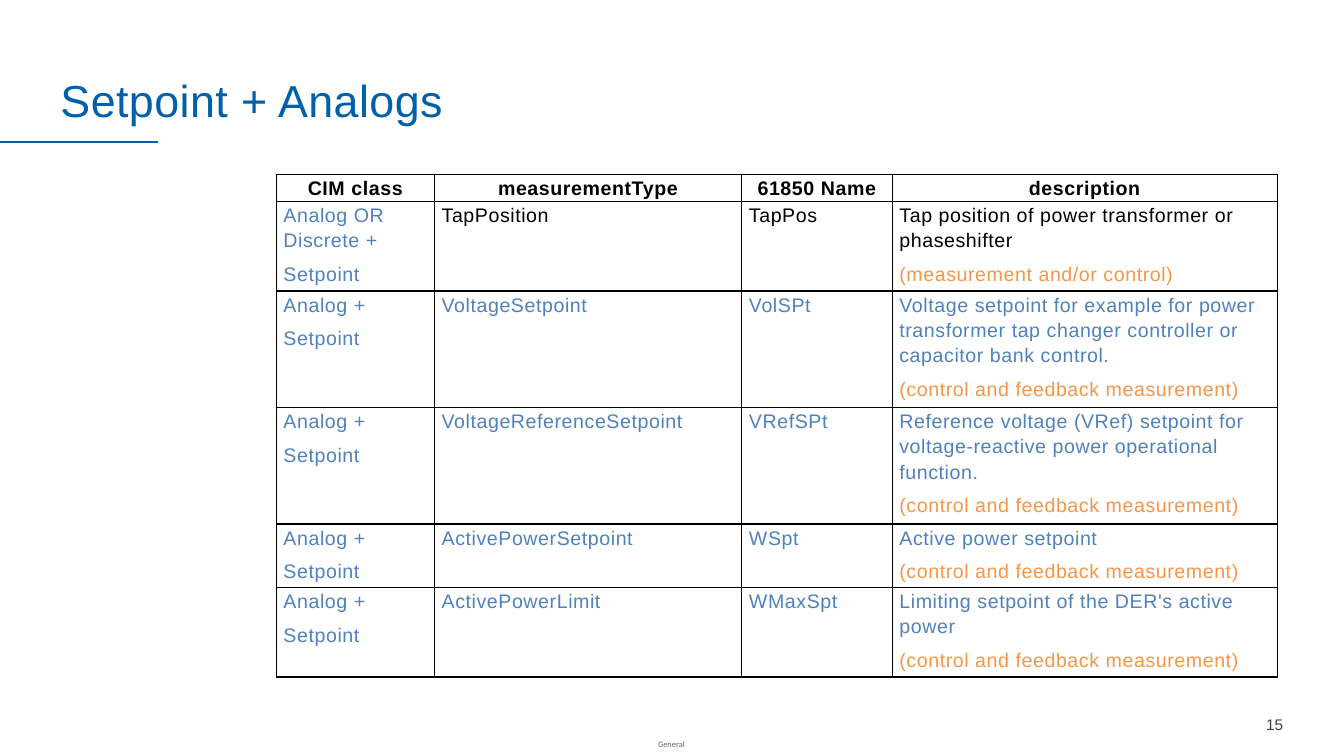
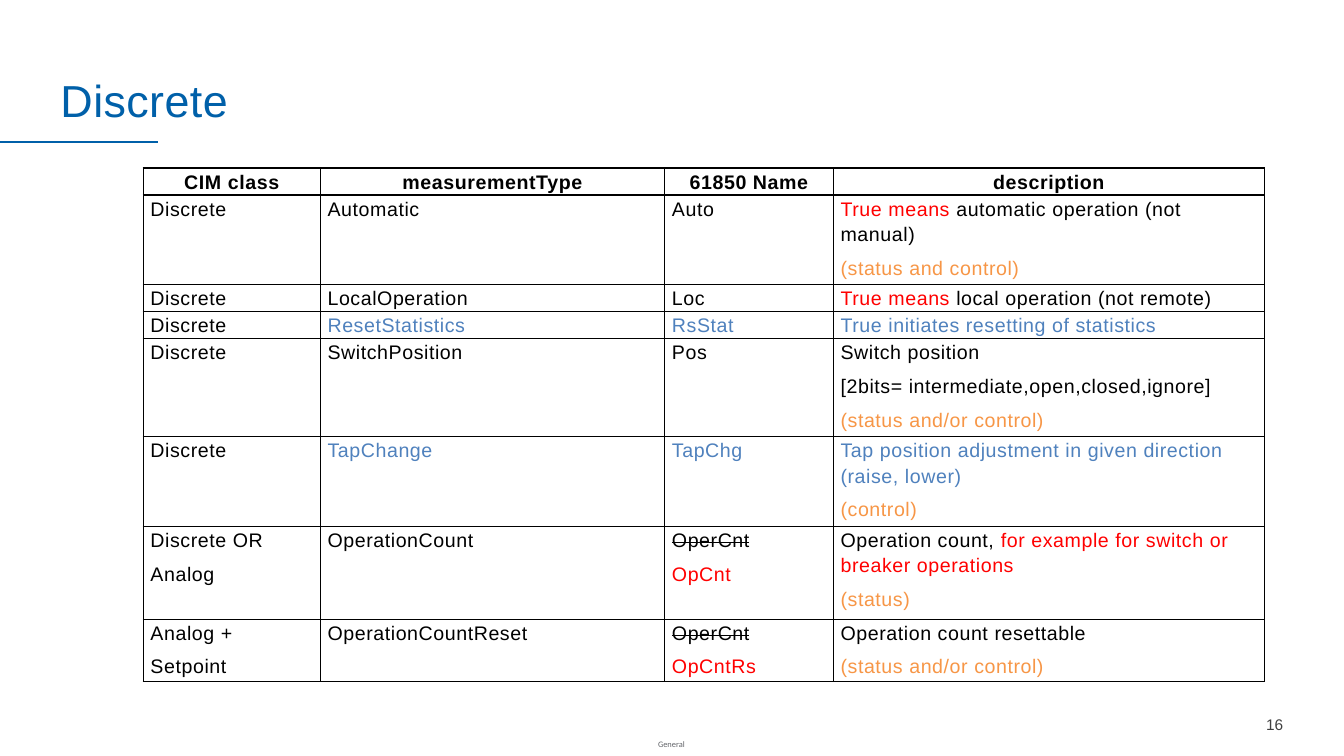
"""Build the two slides that map CIM classes to IEC 61850 names."""
from dataclasses import dataclass
from functools import partial

from lxml.etree import SubElement
from pptx import Presentation
from pptx.dml.color import RGBColor
from pptx.enum.shapes import MSO_CONNECTOR as Connector
from pptx.enum.text import MSO_ANCHOR as Anchor, MSO_AUTO_SIZE as AutoSize, PP_ALIGN as Align
from pptx.oxml.ns import qn
from pptx.util import Pt


@dataclass(frozen=True)
class Theme:
    """Colours, fonts and type sizes of the deck."""
    accent: str = "0060A9"
    black: str = "000000"
    blue: str = "4F81BD"
    orange: str = "F79646"
    red: str = "FF0000"
    footer: str = "626469"
    number: str = "404040"
    font: str = "Arial"
    footer_font: str = "Calibri"
    title_size: float = 32
    table_size: float = 14
    number_size: float = 11
    footer_size: float = 6


THEME = Theme()


@dataclass(frozen=True)
class Span:
    """A piece of table text in one colour."""
    text: str
    colour: str
    struck: bool = False


@dataclass(frozen=True)
class TableSpec:
    """Place, grid and content of one slide's table."""
    title: str
    number: int
    left: float
    top: float
    widths: tuple
    heights: tuple
    rows: tuple


black = partial(Span, colour=THEME.black)
blue = partial(Span, colour=THEME.blue)
orange = partial(Span, colour=THEME.orange)
red = partial(Span, colour=THEME.red)

HEADERS = ("CIM class", "measurementType", "61850 Name", "description")
ANALOG_SETPOINT = (blue("Analog +"), blue("Setpoint"))
FEEDBACK = orange("(control and feedback measurement)")
STATUS_OR_CONTROL = orange("(status and/or control)")
DISCRETE = black("Discrete")
OLD_COUNT = black("OperCnt", struck=True)

SETPOINTS = TableSpec(
    "Setpoint + Analogs", 15, 197.3, 124.5,
    (113, 219.5, 107.5, 275), (19.3, 64, 83, 83, 45.3, 63.6),
    (
        ((blue("Analog OR Discrete +"), blue("Setpoint")), black("TapPosition"), black("TapPos"),
         (black("Tap position of power transformer or phaseshifter"),
          orange("(measurement and/or control)"))),
        (ANALOG_SETPOINT, blue("VoltageSetpoint"), blue("VolSPt"),
         (blue("Voltage setpoint for example for power transformer tap changer controller"
               " or capacitor bank control."), FEEDBACK)),
        (ANALOG_SETPOINT, blue("VoltageReferenceSetpoint"), blue("VRefSPt"),
         (blue("Reference voltage (VRef) setpoint for voltage-reactive power operational"
               " function."), FEEDBACK)),
        (ANALOG_SETPOINT, blue("ActivePowerSetpoint"), blue("WSpt"),
         (blue("Active power setpoint"), FEEDBACK)),
        (ANALOG_SETPOINT, blue("ActivePowerLimit"), blue("WMaxSpt"),
         (blue("Limiting setpoint of the DER's active power"), FEEDBACK)),
    ))

DISCRETES = TableSpec(
    "Discrete", 16, 102.3, 120,
    (126.5, 246, 120.5, 308), (18.2, 60, 18.2, 18.2, 66.4, 60, 66.4, 42.2),
    (
        (DISCRETE, black("Automatic"), black("Auto"),
         ((red("True means"), black(" automatic operation (not manual)")),
          orange("(status and control)"))),
        (DISCRETE, black("LocalOperation"), black("Loc"),
         ((red("True means"), black(" local operation (not remote)")),)),
        (DISCRETE, blue("ResetStatistics"), blue("RsStat"),
         blue("True initiates resetting of statistics")),
        (DISCRETE, black("SwitchPosition"), black("Pos"),
         (black("Switch position"), black("[2bits= intermediate,open,closed,ignore]"),
          STATUS_OR_CONTROL)),
        (DISCRETE, blue("TapChange"), blue("TapChg"),
         (blue("Tap position adjustment in given direction (raise, lower)"),
          orange("(control)"))),
        ((black("Discrete OR"), black("Analog")), black("OperationCount"),
         (OLD_COUNT, red("OpCnt")),
         ((black("Operation count, "), red("for example for switch or breaker operations")),
          orange("(status)"))),
        ((black("Analog +"), black("Setpoint")), black("OperationCountReset"),
         (OLD_COUNT, red("OpCntRs")),
         (black("Operation count resettable"), STATUS_OR_CONTROL)),
    ))


def as_tuple(item):
    """Wrap a lone item in a tuple."""
    return item if isinstance(item, tuple) else (item,)


def style_paragraph(para, size, colour=None, name=THEME.font, bold=False, spacing=0):
    """Set the font of a paragraph, with letter spacing in points."""
    font = para.font
    font.name, font.size, font.bold = name, Pt(size), bold
    if colour:
        font.color.rgb = RGBColor.from_string(colour)
    if spacing:
        para._p.pPr.find(qn("a:defRPr")).set("spc", str(round(spacing * 100)))


def add_title(slide, text):
    """Fill and place the title placeholder."""
    title = slide.shapes.title
    title.left, title.top, title.width, title.height = Pt(36), Pt(30), Pt(888), Pt(64.3)
    frame = title.text_frame
    frame.text = text
    frame.auto_size = AutoSize.NONE
    frame.vertical_anchor = Anchor.BOTTOM
    para = frame.paragraphs[0]
    para.alignment = Align.LEFT
    para.line_spacing = 0.9
    style_paragraph(para, THEME.title_size, THEME.accent, spacing=0.3)


def add_label(slide, text, left, top, width, height, size, colour, name=THEME.font,
              align=Align.LEFT, wrap=True):
    """Add a one-line text box; an unwrapped one has no insets."""
    box = slide.shapes.add_textbox(Pt(left), Pt(top), Pt(width), Pt(height))
    frame = box.text_frame
    frame.word_wrap = wrap
    frame.vertical_anchor = Anchor.MIDDLE
    if not wrap:
        frame.margin_left = frame.margin_right = frame.margin_top = frame.margin_bottom = 0
    frame.text = text
    para = frame.paragraphs[0]
    para.alignment = align
    style_paragraph(para, size, colour, name)


def add_title_rule(slide):
    """Draw the short line under the title."""
    rule = slide.shapes.add_connector(Connector.STRAIGHT, 0, Pt(101.5), Pt(113), Pt(101.5))
    rule.line.color.rgb = RGBColor.from_string(THEME.accent)
    rule.line.width = Pt(1.5)
    SubElement(rule._element.spPr, qn("a:effectLst"))


def add_borders(cell):
    """Give a cell thin black lines on all sides."""
    properties = cell._tc.get_or_add_tcPr()
    for side in ("lnL", "lnR", "lnT", "lnB"):
        line = SubElement(properties, qn(f"a:{side}"), w=str(Pt(1)))
        fill = SubElement(line, qn("a:solidFill"))
        SubElement(fill, qn("a:srgbClr"), val=THEME.black)


def fill_cell(cell, content, header=False):
    """Write the paragraphs of a cell and format it."""
    add_borders(cell)
    cell.fill.background()
    cell.margin_left = cell.margin_right = Pt(5.2)
    cell.margin_top = cell.margin_bottom = 0
    frame = cell.text_frame
    for index, spans in enumerate(as_tuple(content)):
        para = frame.add_paragraph() if index else frame.paragraphs[0]
        para.alignment = Align.CENTER if header else Align.LEFT
        para.line_spacing = 1.15
        para.space_before = Pt(3 if index else 0)
        para.space_after = Pt(3)
        style_paragraph(para, THEME.table_size, bold=header, spacing=0.4)
        for span in as_tuple(spans):
            run = para.add_run()
            run.text = span.text
            run.font.color.rgb = RGBColor.from_string(span.colour)
            if span.struck:
                run._r.get_or_add_rPr().set("strike", "sngStrike")


def add_mapping_table(slide, spec):
    """Add the table with its header row."""
    table = slide.shapes.add_table(
        len(spec.heights), len(spec.widths), Pt(spec.left), Pt(spec.top),
        Pt(sum(spec.widths)), Pt(sum(spec.heights))).table
    table.first_row = table.horz_banding = False
    for column, width in zip(table.columns, spec.widths):
        column.width = Pt(width)
    rows = (tuple(map(black, HEADERS)), *spec.rows)
    for row_index, (row, height, contents) in enumerate(zip(table.rows, spec.heights, rows)):
        row.height = Pt(height)
        for cell, content in zip(row.cells, contents):
            fill_cell(cell, content, header=row_index == 0)


def add_mapping_slide(deck, spec):
    """Add one slide with title, rule, footer, number and table."""
    slide = deck.slides.add_slide(deck.slide_layouts[5])
    add_title(slide, spec.title)
    add_title_rule(slide)
    add_label(slide, "General", 470, 528, 21, 7, THEME.footer_size, THEME.footer,
              THEME.footer_font, wrap=False)
    add_label(slide, str(spec.number), 861, 503.3, 62.7, 28.8, THEME.number_size,
              THEME.number, align=Align.RIGHT)
    add_mapping_table(slide, spec)


def main():
    """Build and save the deck."""
    deck = Presentation()
    deck.slide_width, deck.slide_height = Pt(960), Pt(540)
    for spec in (SETPOINTS, DISCRETES):
        add_mapping_slide(deck, spec)
    deck.save("out.pptx")


if __name__ == "__main__":
    main()
